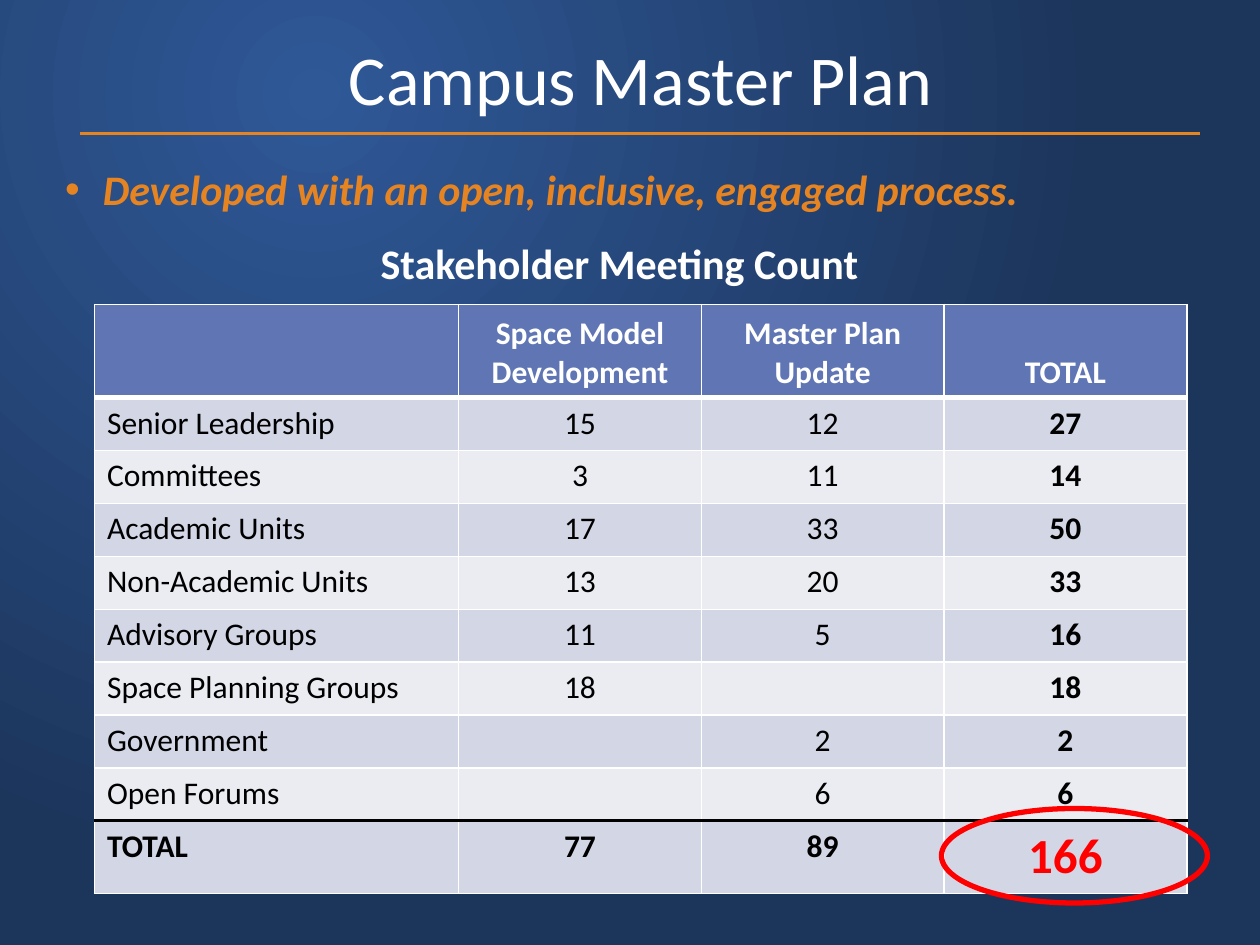
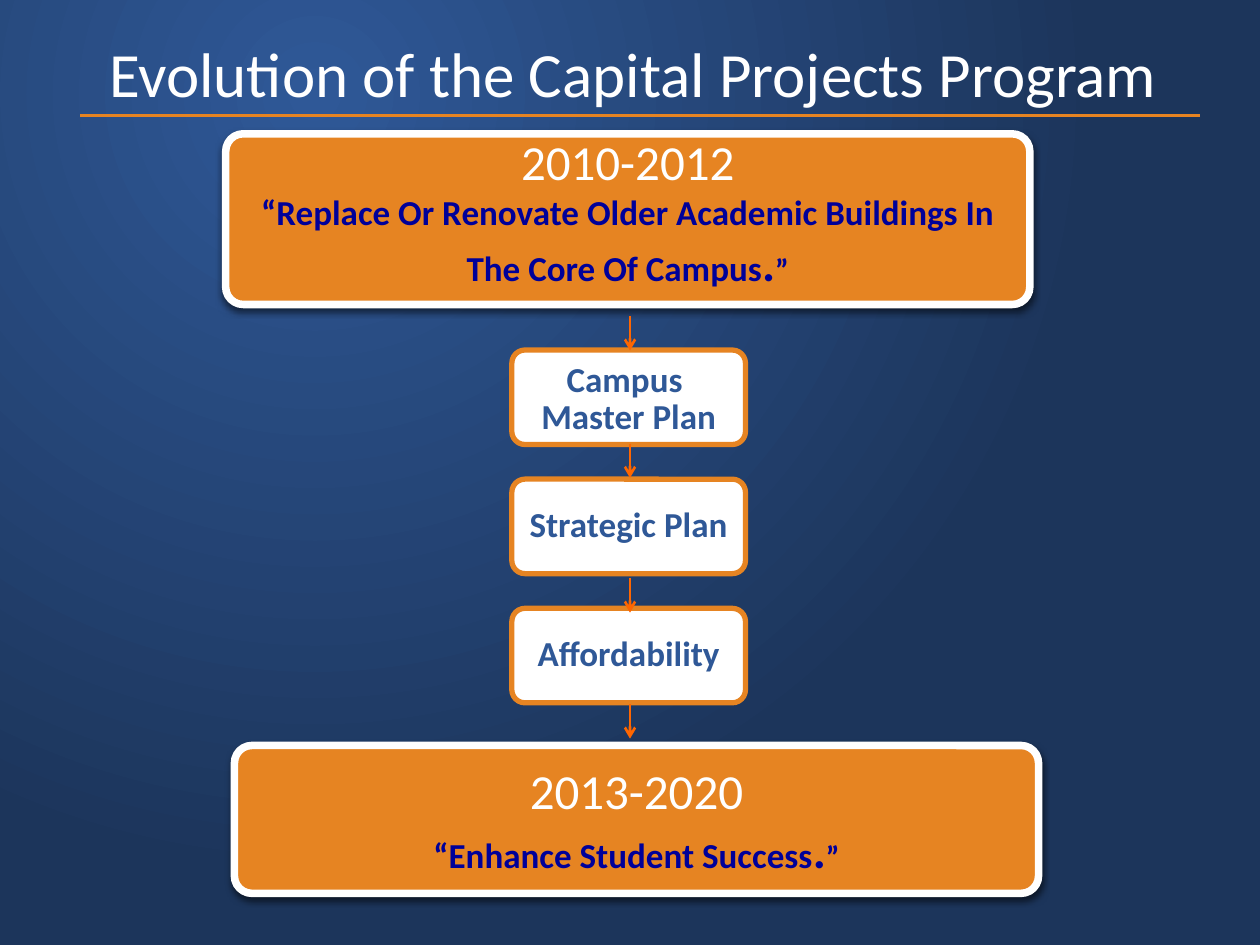
"""Build two campus planning slides: a meeting count table and a program flow."""
import pptx
import pptx.dml.color
import pptx.enum.dml
import pptx.enum.shapes
import pptx.enum.text
import pptx.oxml
import pptx.oxml.ns
import pptx.util

Pt = pptx.util.Pt
qn = pptx.oxml.ns.qn
SHAPES = pptx.enum.shapes.MSO_SHAPE
ALIGN = pptx.enum.text.PP_ALIGN
ANCHOR = pptx.enum.text.MSO_ANCHOR

COLORS = {
    "glow": "2F5897", "night": "1C355B", "orange": "E68422", "white": "FFFFFF",
    "black": "000000", "red": "FF0000", "navy": "000099", "arrow": "FF6600",
    "header": "6076B4", "band_dark": "D2D6E5", "band_light": "EAECF2",
}
FONT = "Calibri"
MEETINGS = [
    ("Senior Leadership", "15", "12", "27"),
    ("Committees", "3", "11", "14"),
    ("Academic Units", "17", "33", "50"),
    ("Non-Academic Units", "13", "20", "33"),
    ("Advisory Groups", "11", "5", "16"),
    ("Space Planning Groups", "18", "", "18"),
    ("Government", "", "2", "2"),
    ("Open Forums", "", "6", "6"),
    ("TOTAL", "77", "89", "166"),
]
HEADINGS = ["", "Space Model\nDevelopment", "Master Plan\nUpdate", "TOTAL"]


def rgb(name):
    return pptx.dml.color.RGBColor.from_string(COLORS[name])


def make_element(tag, content="", attributes=""):
    return pptx.oxml.parse_xml(
        f'<a:{tag} {pptx.oxml.ns.nsdecls("a")} {attributes}>{content}</a:{tag}>')


def color_xml(name, inner=""):
    return f'<a:srgbClr val="{COLORS[name]}">{inner}</a:srgbClr>'


def points(*lengths):
    return [Pt(length) for length in lengths]


def add_run(paragraph, text, size, color, bold=False, italic=False):
    run = paragraph.add_run()
    run.text = text
    font = run.font
    font.name, font.size, font.bold, font.italic = FONT, Pt(size), bold, italic
    font.color.rgb = rgb(color)


def next_paragraph(frame, align=ALIGN.CENTER):
    first = frame.paragraphs[0]
    paragraph = frame.add_paragraph() if first.runs else first
    paragraph.alignment = align
    return paragraph


def set_insets(frame, side, top, bottom):
    frame.margin_left = frame.margin_right = Pt(side)
    frame.margin_top, frame.margin_bottom = Pt(top), Pt(bottom)


def place(shape, box):
    shape.left, shape.top, shape.width, shape.height = points(*box)


def set_background(master):
    fill = master.background.fill
    fill.gradient()
    for stop, name in zip(fill.gradient_stops, ("glow", "night")):
        stop.color.rgb = rgb(name)
    gradient = master.element.find(".//" + qn("a:gradFill"))
    linear = gradient.find(qn("a:lin"))
    focus = '<a:fillToRect l="50000" t="20000" r="100000" b="100000"/>'
    gradient.replace(linear, make_element("path", focus, 'path="circle"'))


def add_line(slide, start, end, color, width, arrow=False):
    line = slide.shapes.add_connector(
        pptx.enum.shapes.MSO_CONNECTOR.STRAIGHT, *points(*start, *end))
    line.line.color.rgb = rgb(color)
    line.line.width = Pt(width)
    if arrow:
        line.line._get_or_add_ln().append(make_element("tailEnd", "", 'type="arrow"'))
    line.element.spPr.append(make_element("effectLst"))


def add_title(slide, text, size, box, rule_y):
    title = slide.shapes.title
    place(title, box)
    frame = title.text_frame
    frame.auto_size = pptx.enum.text.MSO_AUTO_SIZE.NONE
    frame.vertical_anchor = ANCHOR.MIDDLE
    add_run(next_paragraph(frame), text, size, "white")
    add_line(slide, (46, rule_y), (686, rule_y), "orange", 2.25)


def add_bullet(slide, text, box):
    body = slide.placeholders[1]
    place(body, box)
    paragraph = next_paragraph(body.text_frame, ALIGN.LEFT)
    properties = paragraph._p.get_or_add_pPr()
    properties.set("marL", str(int(Pt(21.6))))
    properties.set("indent", str(int(Pt(-21.6))))
    add_run(paragraph, text, 24, "orange", bold=True, italic=True)


def add_caption(slide, text, box):
    frame = slide.shapes.add_textbox(*points(*box)).text_frame
    frame.word_wrap = True
    add_run(next_paragraph(frame), text, 24, "white", bold=True)


def set_borders(cell, top, bottom):
    thin = ("white", 1)
    properties = cell._tc.get_or_add_tcPr()
    sides = {"lnL": thin, "lnR": thin, "lnT": top, "lnB": bottom}
    for position, (tag, (color, width)) in enumerate(sides.items()):
        fill = f"<a:solidFill>{color_xml(color)}</a:solidFill>"
        properties.insert(position, make_element(tag, fill, f'w="{int(Pt(width))}"'))


def fill_cell(cell, text, fill, align, size, color, bold):
    cell.fill.solid()
    cell.fill.fore_color.rgb = rgb(fill)
    for line in filter(None, text.split("\n")):
        add_run(next_paragraph(cell.text_frame, align), line, size, color, bold)


def add_meeting_table(slide, left, top, unit):
    rows = [HEADINGS, *MEETINGS]
    last = len(rows) - 1
    heights = [53.3] + [30.24] * (last - 1) + [41]
    table = slide.shapes.add_table(
        len(rows), 4, *points(left, top, 9 * unit, sum(heights))).table
    table.first_row = table.horz_banding = False
    for column, share in zip(table.columns, (3, 2, 2, 2)):
        column.width = Pt(share * unit)
    rules = {1: ("white", 3), last: ("black", 2.25)}
    thin = ("white", 1)
    for r, values in enumerate(rows):
        table.rows[r].height = Pt(heights[r])
        band = "header" if r == 0 else "band_dark" if r % 2 else "band_light"
        for c, value in enumerate(values):
            cell = table.cell(r, c)
            grand_total = r == last and c == 3
            color = "white" if r == 0 else "red" if grand_total else "black"
            fill_cell(cell, value, band, ALIGN.CENTER if c else ALIGN.LEFT,
                      28 if grand_total else 18, color, r in (0, last) or c == 3)
            if r == 0:
                cell.vertical_anchor = ANCHOR.BOTTOM
            set_borders(cell, rules.get(r, thin), rules.get(r + 1, thin))


def add_highlight(slide, box):
    ring = slide.shapes.add_shape(SHAPES.OVAL, *points(*box))
    ring.shadow.inherit = False
    ring.fill.background()
    ring.line.color.rgb = rgb("red")
    ring.line.width = Pt(3)


def add_card(slide, box, radius, fill, outline, width):
    card = slide.shapes.add_shape(SHAPES.ROUNDED_RECTANGLE, *points(*box))
    card.adjustments[0] = radius / box[3]
    card.shadow.inherit = False
    card.fill.solid()
    card.fill.fore_color.rgb = rgb(fill)
    card.line.color.rgb = rgb(outline)
    card.line.width = Pt(width)
    card.text_frame.word_wrap = True
    card.text_frame.vertical_anchor = ANCHOR.MIDDLE
    return card


def add_era(slide, box, years, goal, bottom_inset):
    era = add_card(slide, box, 10, "orange", "white", 4.32)
    shadow = make_element(
        "outerShdw", color_xml("black", '<a:alpha val="55000"/>'),
        f'blurRad="{int(Pt(4))}" dist="{int(Pt(2))}" dir="5400000" rotWithShape="0"')
    era.element.spPr.find(qn("a:effectLst")).append(shadow)
    frame = era.text_frame
    set_insets(frame, 5, 5.8, bottom_inset)
    add_run(next_paragraph(frame), years, 28, "white")
    quote = next_paragraph(frame)
    for text, size in (("“" + goal, 20), (".", 28), ("”", 18)):
        add_run(quote, text, size, "navy", bold=True)


def add_driver(slide, box, lines):
    frame = add_card(slide, box, 7.5, "white", "orange", 3).text_frame
    set_insets(frame, 3, 4.3, 4.3)
    for line in lines:
        paragraph = next_paragraph(frame)
        add_run(paragraph, line, 20, "glow", bold=True)
    paragraph.line_spacing = 0.9
    paragraph.space_after = Pt(7)


def build_meeting_slide(deck):
    slide = deck.slides.add_slide(deck.slide_layouts.get_by_name("Title and Content"))
    add_title(slide, "Campus Master Plan", 40, (30, 16.5, 672, 55.5), 76.3)
    add_bullet(slide, "Developed with an open, inclusive, engaged process.",
               (30, 90, 666, 84))
    add_meeting_table(slide, 54, 174, 69.36)
    add_caption(slide, "Stakeholder Meeting Count", (192, 132, 324, 36))
    add_highlight(slide, (538, 462, 152, 54))


def build_evolution_slide(deck):
    slide = deck.slides.add_slide(deck.slide_layouts.get_by_name("Title Only"))
    add_title(slide, "Evolution of the Capital Projects Program", 36,
              (10, 16, 703.5, 51), 66)
    add_era(slide, (129, 76.5, 459.5, 97.5), "2010-2012",
            "Replace Or Renovate Older Academic Buildings In The Core Of Campus", 14.3)
    drivers = [("Campus ", "Master Plan"), ("Strategic Plan",), ("Affordability",)]
    for step, lines in enumerate(drivers):
        add_driver(slide, (292.5, 200 + 73.8 * step, 133.5, 54), lines)
    add_era(slide, (134, 426, 459.5, 84.5), "2013-2020", "Enhance Student Success", 5.8)
    for top in (180.7, 253.5, 330.5, 402.5):
        add_line(slide, (360, top), (360, top + 19.6), "arrow", 1.5, arrow=True)


def main():
    deck = pptx.Presentation()
    deck.slide_width, deck.slide_height = points(720, 540)
    set_background(deck.slide_master)
    build_meeting_slide(deck)
    build_evolution_slide(deck)
    deck.save("out.pptx")


if __name__ == "__main__":
    main()
